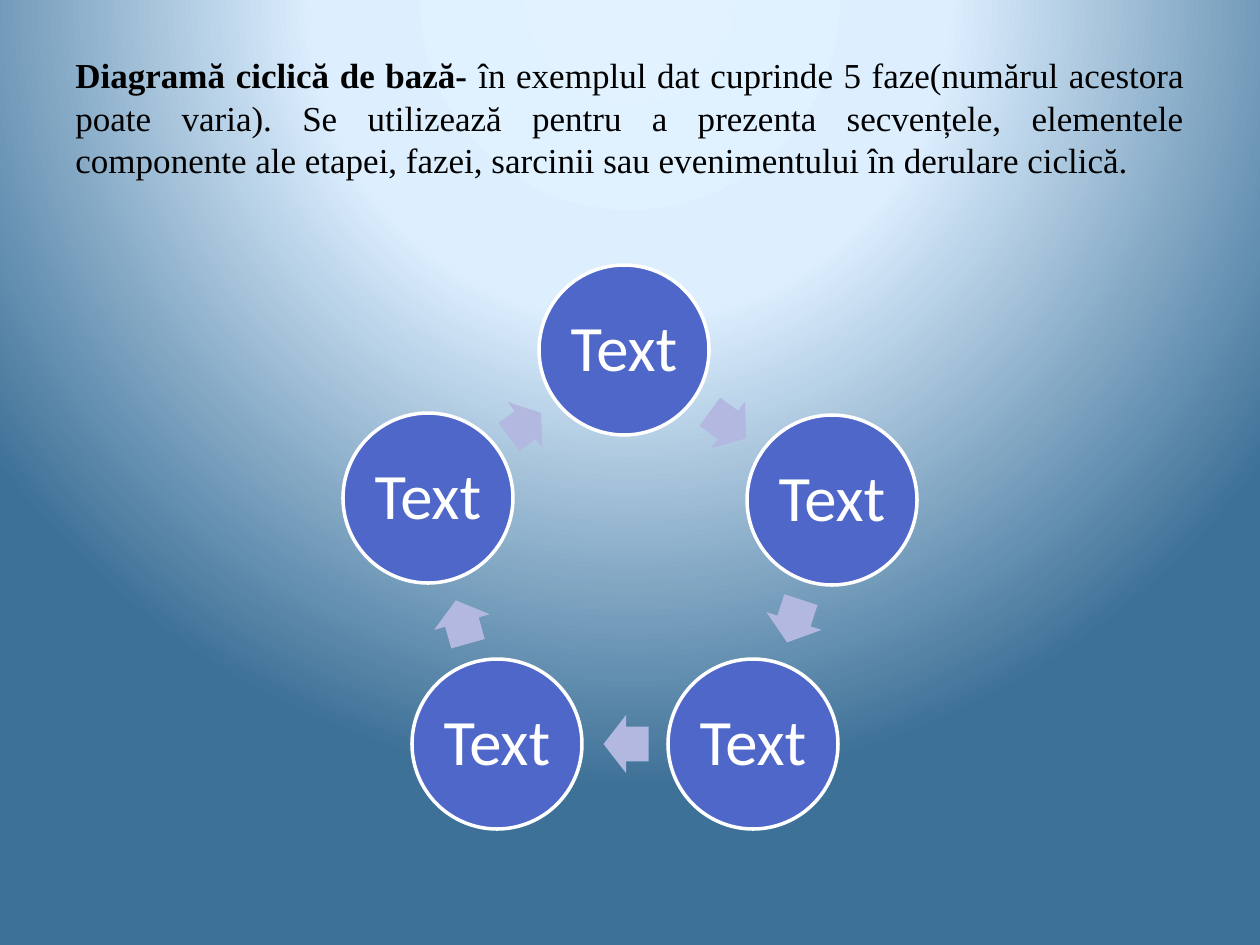
"""Build a slide with a five-phase basic cycle diagram."""
from lxml import etree
from pptx import Presentation
from pptx import util as u
from pptx.dml.color import RGBColor
from pptx.enum import shapes, text
from pptx.oxml import ns

PX = 914400 / 126
BLACK = RGBColor(0x00, 0x00, 0x00)
WHITE = RGBColor(0xFF, 0xFF, 0xFF)
BLUE = RGBColor(0x4E, 0x67, 0xC8)
LILAC = RGBColor(0xB2, 0xB8, 0xE0)
STOPS = [(0, RGBColor(0xE3, 0xF2, 0xFF)), (40, RGBColor(0xDD, 0xEF, 0xFF)),
         (100, RGBColor(0x3E, 0x71, 0x97))]
TITLE = [
    ("Diagramă ciclică de bază- ", True),
    ("în exemplul dat cuprinde 5 faze(numărul acestora poate varia). "
     "Se utilizează pentru a prezenta secvențele, elementele componente ale "
     "etapei, fazei, sarcinii sau evenimentului în derulare ciclică.", False),
]
DISC = 170
PHASES = [(624, 350), (832, 500), (753, 744), (497, 744), (428, 498)]
ARROWS = [(728, 425, 45, 36), (794, 621, 45, 108), (626, 744, 45, 180),
          (462, 622, 45, 254.3), (525, 425, 40, 323)]


def add_run(para, words, size, font, color, bold=False):
    run = para.add_run()
    run.text = words
    run.font.size = u.Pt(size)
    run.font.name = font
    run.font.color.rgb = color
    run.font.bold = bold


def add_node(kind, x, y, wide, high, color):
    box = [round(n * PX) for n in (x - wide / 2, y - high / 2, wide, high)]
    node = slide.shapes.add_shape(kind, *box)
    node.shadow.inherit = False
    node.fill.solid()
    node.fill.fore_color.rgb = color
    return node


deck = Presentation()
deck.slide_width = round(1260 * PX)
deck.slide_height = round(945 * PX)
slide = deck.slides.add_slide(deck.slide_layouts[6])

slide.background.fill.gradient()
grad = slide.background._cSld.find(".//" + ns.qn("a:gradFill"))
for part in list(grad):
    grad.remove(part)
stops = etree.SubElement(grad, ns.qn("a:gsLst"))
for place, color in STOPS:
    stop = etree.SubElement(stops, ns.qn("a:gs"), pos=str(place * 1000))
    etree.SubElement(stop, ns.qn("a:srgbClr"), val=str(color))
ring = etree.SubElement(grad, ns.qn("a:path"), path="circle")
etree.SubElement(ring, ns.qn("a:fillToRect"),
                 l="50000", t="-80000", r="50000", b="180000")

title = slide.shapes.add_textbox(*[round(n * PX) for n in (63, 38, 1134, 158)])
frame = title.text_frame
frame.word_wrap = True
frame.vertical_anchor = text.MSO_ANCHOR.MIDDLE
para = frame.paragraphs[0]
para.alignment = text.PP_ALIGN.JUSTIFY
for words, bold in TITLE:
    add_run(para, words, 20, "Times New Roman", BLACK, bold)

for (x, y), (left, top, wide, turn) in zip(PHASES, ARROWS):
    disc = add_node(shapes.MSO_SHAPE.OVAL, x, y, DISC, DISC, BLUE)
    disc.line.color.rgb = WHITE
    disc.line.width = u.Pt(2)
    frame = disc.text_frame
    frame.word_wrap = True
    frame.vertical_anchor = text.MSO_ANCHOR.MIDDLE
    frame.margin_left = frame.margin_right = round(6 * PX)
    frame.margin_top = frame.margin_bottom = round(6 * PX)
    para = frame.paragraphs[0]
    para.alignment = text.PP_ALIGN.CENTER
    para.line_spacing = 0.9
    add_run(para, "Text", 37, "Calibri", WHITE)

    arrow = add_node(shapes.MSO_SHAPE.RIGHT_ARROW, left, top, wide, 58, LILAC)
    arrow.line.fill.background()
    arrow.adjustments[0] = 0.6
    arrow.rotation = turn

deck.save("out.pptx")
